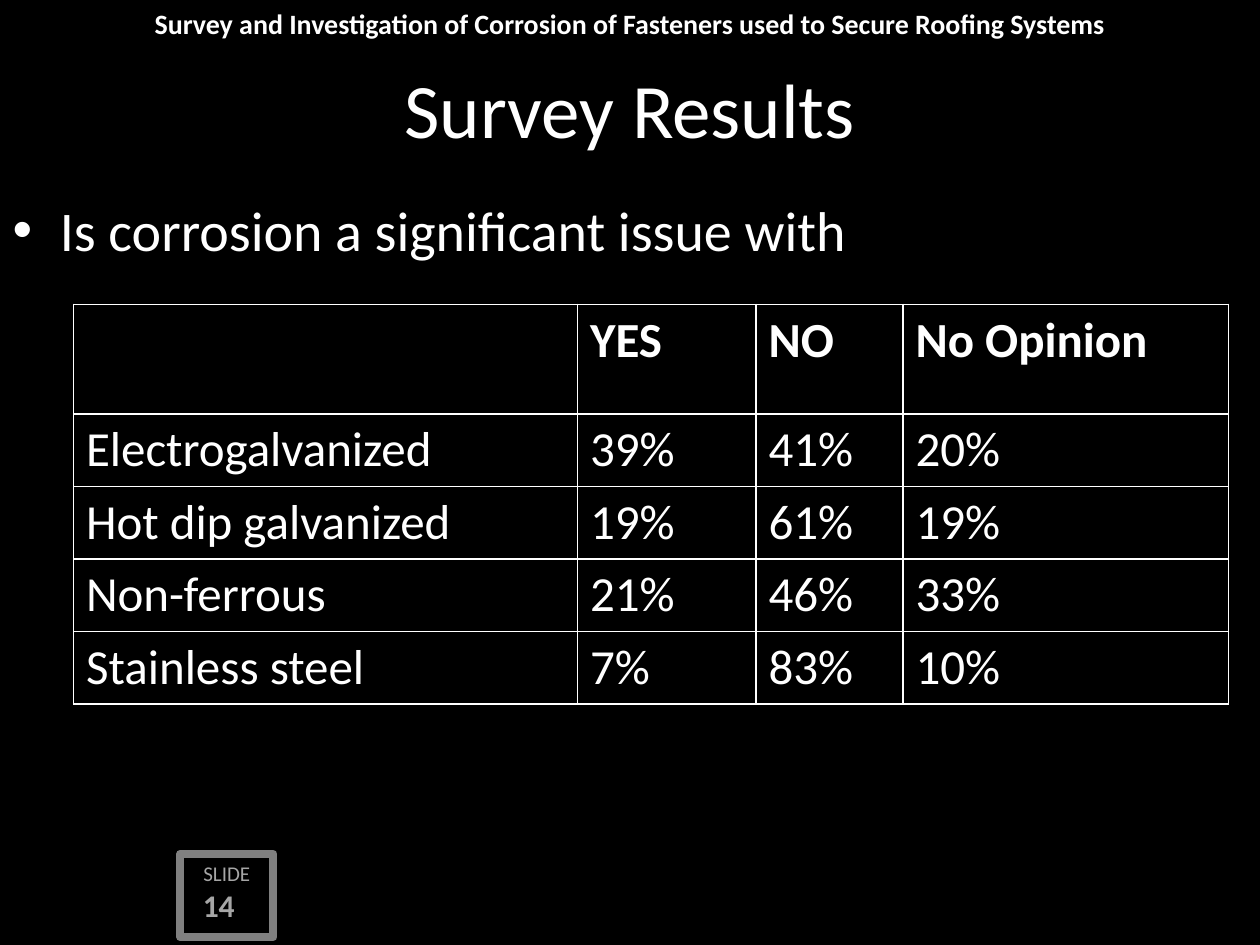
from typing import NamedTuple

from pptx import Presentation
from pptx.dml.color import RGBColor
from pptx.enum.shapes import MSO_SHAPE
from pptx.enum.text import MSO_ANCHOR, MSO_AUTO_SIZE, PP_ALIGN
from pptx.util import Pt

RECTANGLE = MSO_SHAPE.RECTANGLE
TOP, MIDDLE = MSO_ANCHOR.TOP, MSO_ANCHOR.MIDDLE
NO_FIT = MSO_AUTO_SIZE.NONE
LEFT, CENTER = PP_ALIGN.LEFT, PP_ALIGN.CENTER

FONT = "Calibri"
COLORS = {"black": "000000", "white": "FFFFFF", "frame": "808080", "number": "A6A6A6"}


class Area(NamedTuple):
    left: float
    top: float
    width: float
    height: float


class TextStyle(NamedTuple):
    size: float
    color: str = "white"
    bold: bool = False
    align: PP_ALIGN = CENTER
    anchor: MSO_ANCHOR = TOP


class SurveyRow(NamedTuple):
    label: str
    yes: str
    no: str
    no_opinion: str


SURVEY = [
    SurveyRow("", "YES", "NO", "No Opinion"),
    SurveyRow("Electrogalvanized", "39%", "41%", "20%"),
    SurveyRow("Hot dip galvanized", "19%", "61%", "19%"),
    SurveyRow("Non-ferrous", "21%", "46%", "33%"),
    SurveyRow("Stainless steel", "7%", "83%", "10%"),
]
COLUMN_WIDTHS = [288, 102, 84, 186]
HEADER_HEIGHT, ROW_HEIGHT = 62.6, 40.7


def rgb(name: str) -> RGBColor:
    return RGBColor.from_string(COLORS[name])


def paint(fill, name: str) -> None:
    fill.solid()
    fill.fore_color.rgb = rgb(name)


def write(frame, text: str, style: TextStyle) -> None:
    frame.text = text
    para = frame.paragraphs[0]
    para.alignment = style.align
    para.space_before = Pt(0)
    for span in para.runs:
        span.font.name = FONT
        span.font.size = Pt(style.size)
        span.font.bold = style.bold
        span.font.color.rgb = rgb(style.color)


def fill_box(box, text: str, style: TextStyle) -> None:
    frame = box.text_frame
    frame.word_wrap = True
    frame.auto_size = NO_FIT
    frame.vertical_anchor = style.anchor
    write(frame, text, style)


def add_label(page, area: Area, text: str, style: TextStyle) -> None:
    fill_box(page.shapes.add_textbox(*map(Pt, area)), text, style)


def fill_placeholder(box, area: Area, text: str, style: TextStyle) -> None:
    box.left, box.top, box.width, box.height = map(Pt, area)
    fill_box(box, text, style)


def add_number_frame(page, area: Area) -> None:
    box = page.shapes.add_shape(RECTANGLE, *map(Pt, area))
    box.shadow.inherit = False
    paint(box.fill, "black")
    box.line.color.rgb = rgb("frame")
    box.line.width = Pt(4.5)
    fill_box(box, "SLIDE", TextStyle(12, "number"))


def add_survey_table(page, left: float, top: float) -> None:
    heights = [HEADER_HEIGHT] + [ROW_HEIGHT] * (len(SURVEY) - 1)
    area = Area(left, top, sum(COLUMN_WIDTHS), sum(heights))
    table = page.shapes.add_table(len(SURVEY), len(COLUMN_WIDTHS), *map(Pt, area)).table
    table.first_row = table.horz_banding = False
    for column, width in zip(table.columns, COLUMN_WIDTHS):
        column.width = Pt(width)
    for index, (row, height, values) in enumerate(zip(table.rows, heights, SURVEY)):
        row.height = Pt(height)
        style = TextStyle(28, bold=index == 0, align=LEFT)
        for cell, value in zip(row.cells, values):
            paint(cell.fill, "black")
            write(cell.text_frame, value, style)


def main() -> None:
    deck = Presentation()
    deck.slide_width, deck.slide_height = Pt(720), Pt(540)
    page = deck.slides.add_slide(deck.slide_layouts[1])
    paint(page.background.fill, "black")

    # Slide number and running header
    add_number_frame(page, Area(103, 488, 53.3, 47.5))
    add_label(page, Area(102.2, 502.6, 49.7, 31), "14 ", TextStyle(18, "number", True))
    add_label(
        page,
        Area(0, 0, 720, 21.6),
        "Survey and Investigation of Corrosion of Fasteners used to Secure Roofing Systems",
        TextStyle(16, bold=True),
    )

    # Title and question
    title, body = page.placeholders
    fill_placeholder(title, Area(0, 24, 720, 75.6), "Survey Results",
                     TextStyle(44, anchor=MIDDLE))
    fill_placeholder(body, Area(0, 108, 720, 366), "Is corrosion a significant issue with",
                     TextStyle(32, align=LEFT))

    # Survey answers
    add_survey_table(page, 42, 174)

    deck.save("out.pptx")


if __name__ == "__main__":
    main()
